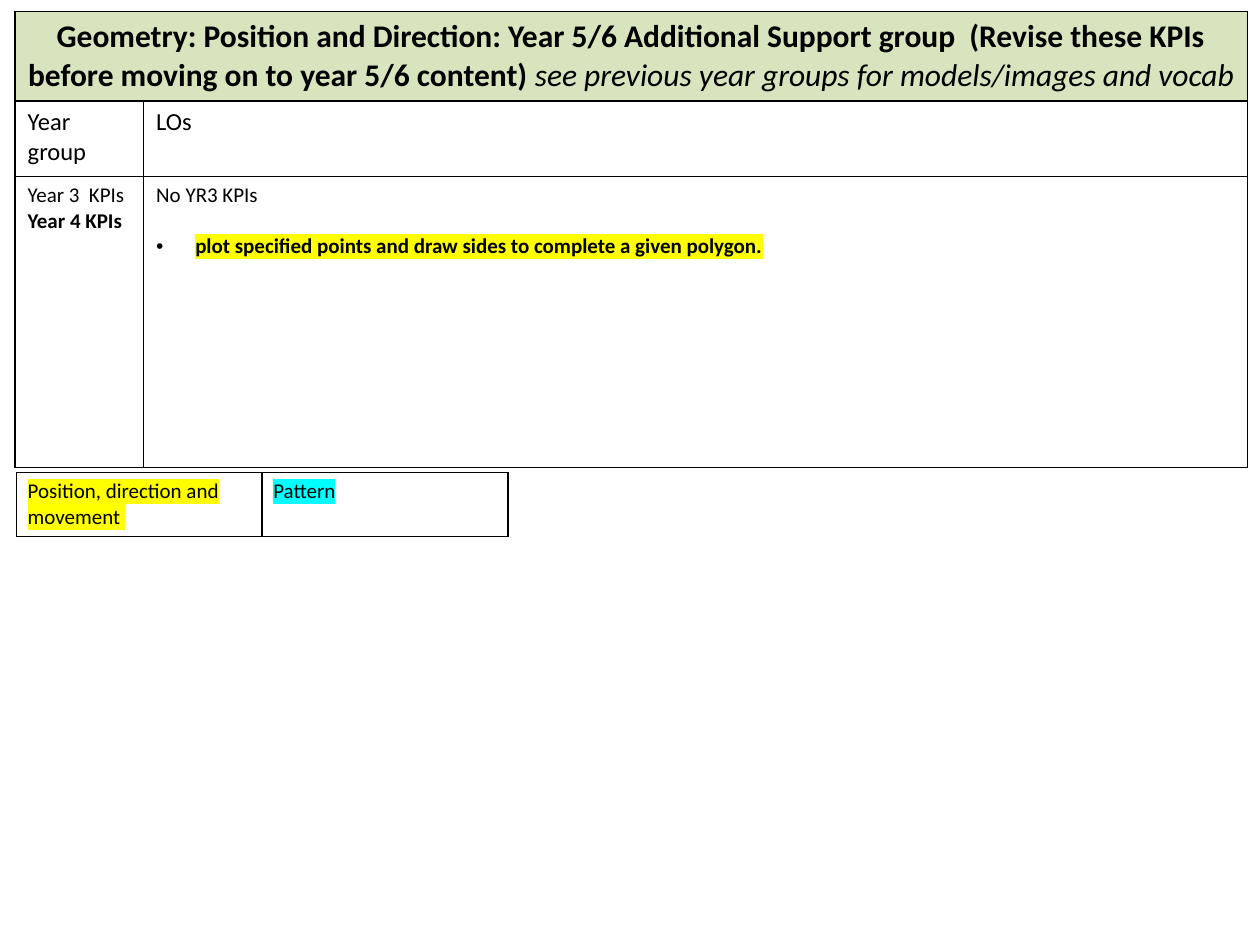
import pptx
import pptx.dml.color
import pptx.enum.text
import pptx.oxml
import pptx.oxml.ns
import pptx.util
from pptx.util import Inches

BLACK = "000000"
GREEN = "D7E4BD"
YELLOW = "FFFF00"
CYAN = "00FFFF"


def rgb(value):
    return pptx.dml.color.RGBColor.from_string(value)


def element(xml):
    ns = pptx.oxml.ns.nsdecls("a")
    return pptx.oxml.parse_xml(xml.replace(" ", f" {ns} ", 1))


def run(text, size=12, bold=False, italic=False, highlight=None):
    return dict(text=text, size=size, bold=bold, italic=italic, highlight=highlight)


def para(*runs, align=None, bullet=False, before=0):
    return dict(runs=runs, align=align, bullet=bullet, before=before)


class SlideBuilder:
    font = "Calibri"

    def __init__(self, s):
        self.s = s

    def table(self, left, top, cols, rows):
        frame = self.s.shapes.add_table(
            len(rows), len(cols), Inches(left), Inches(top), Inches(sum(cols)), Inches(sum(rows)))
        tbl = frame.table
        tbl.first_row = tbl.horz_banding = False
        for column, width in zip(tbl.columns, cols):
            column.width = Inches(width)
        for row, height in zip(tbl.rows, rows):
            row.height = Inches(height)
        for cell in tbl.iter_cells():
            self.border(cell)
            cell.fill.background()
        return tbl

    def border(self, cell):
        tc_pr = cell._tc.get_or_add_tcPr()
        for side in "LRTB":
            tc_pr.append(element(
                f'<a:ln{side} w="12700"><a:solidFill><a:srgbClr val="{BLACK}"/>'
                f'</a:solidFill></a:ln{side}>'))

    def cell(self, cell, *paras, fill=None, margin=0.1):
        cell.margin_left = cell.margin_right = Inches(margin)
        if fill:
            cell.fill.solid()
            cell.fill.fore_color.rgb = rgb(fill)
        tf = cell.text_frame
        for i, item in enumerate(paras):
            p = tf.add_paragraph() if i else tf.paragraphs[0]
            self.paragraph(p, **item)

    def paragraph(self, p, runs, align, bullet, before):
        if align is not None:
            p.alignment = align
        if bullet:
            p_pr = p._p.get_or_add_pPr()
            p_pr.set("marL", str(Inches(0.31)))
            p_pr.set("indent", str(-Inches(0.31)))
            p_pr.append(element('<a:buFont typeface="Arial"/>'))
            p_pr.append(element('<a:buChar char="•"/>'))
        if before:
            p.space_before = pptx.util.Pt(before)
        for item in runs:
            self.run(p.add_run(), **item)

    def run(self, r, text, size, bold, italic, highlight):
        r.text = text
        r.font.size = pptx.util.Pt(size)
        r.font.bold = bold
        r.font.italic = italic
        r.font.color.rgb = rgb(BLACK)
        if highlight:
            r._r.get_or_add_rPr().append(element(
                f'<a:highlight ><a:srgbClr val="{highlight}"/></a:highlight>'))
        r.font.name = self.font


def main():
    prs = pptx.Presentation()
    prs.slide_width, prs.slide_height = Inches(10), Inches(7.5)
    b = SlideBuilder(prs.slides.add_slide(prs.slide_layouts[6]))

    kpis = b.table(0.12, 0.09, [1.02, 8.76], [0.7, 0.6, 2.31])
    kpis.cell(0, 0).merge(kpis.cell(0, 1))
    b.cell(
        kpis.cell(0, 0),
        para(run("Geometry: Position and Direction: Year 5/6 Additional Support group  "
                 "(Revise these KPIs before moving on to year 5/6 content) ", size=18, bold=True),
             run("see previous year groups for models/images and vocab ", size=18, italic=True),
             align=pptx.enum.text.PP_ALIGN.CENTER),
        fill=GREEN, margin=0.08)
    for col, heading in enumerate(["Year group", "LOs"]):
        b.cell(kpis.cell(1, col), para(run(heading, size=14)))
    b.cell(kpis.cell(2, 0), para(run("Year 3  KPIs")), para(run("Year 4 KPIs", bold=True)))
    b.cell(
        kpis.cell(2, 1),
        para(run("No YR3 KPIs")),
        para(run("plot specified points and draw sides to complete a given polygon.",
                 bold=True, highlight=YELLOW), bullet=True, before=14.5))

    key = b.table(0.13, 3.75, [1.95] * 2, [0.5])
    topics = [("Position, direction and movement ", YELLOW), ("Pattern", CYAN)]
    for col, (topic, colour) in enumerate(topics):
        b.cell(key.cell(0, col), para(run(topic, highlight=colour)), margin=0.09)

    prs.save("out.pptx")


if __name__ == "__main__":
    main()
